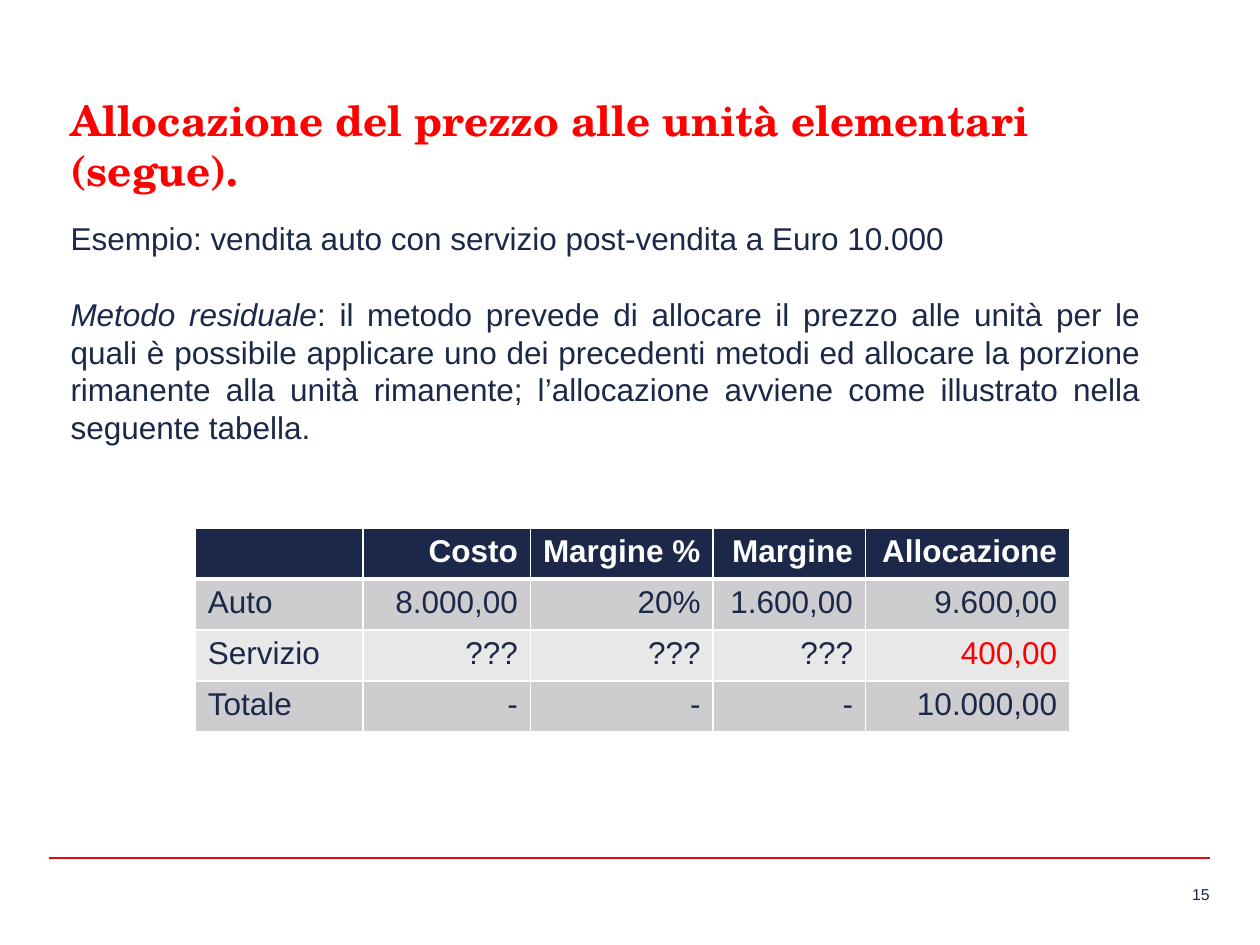
import lxml.etree
import pptx
import pptx.dml.color
import pptx.enum.shapes
import pptx.enum.text
import pptx.oxml.ns
import pptx.util
from pptx.util import Inches

NAVY = pptx.dml.color.RGBColor(0x1B, 0x28, 0x49)
RED = pptx.dml.color.RGBColor(0xFF, 0x00, 0x00)
RULE_RED = pptx.dml.color.RGBColor(0xE3, 0x06, 0x13)
WHITE = pptx.dml.color.RGBColor(0xFF, 0xFF, 0xFF)
DARK_BAND = pptx.dml.color.RGBColor(0xCD, 0xCD, 0xD0)
LIGHT_BAND = pptx.dml.color.RGBColor(0xE8, 0xE8, 0xE9)

ALIGN = pptx.enum.text.PP_ALIGN
BODY_LINE = 21.6

COLUMN_WIDTHS = [1.33, 1.33, 1.45, 1.21, 1.62]
ROWS = [
    ["", "Costo", "Margine %", "Margine", "Allocazione"],
    ["Auto", "8.000,00", "20%", "1.600,00", "9.600,00"],
    ["Servizio", "???", "???", "???", "400,00"],
    ["Totale", "-", "-", "-", "10.000,00"],
]
RESIDUAL_CELL = (2, 4)


def add_child(parent, tag, **attributes):
    return lxml.etree.SubElement(parent, pptx.oxml.ns.qn(tag), attributes)


def add_text(paragraph, text, font="Arial", size=18, color=NAVY,
             bold=False, italic=False, align=ALIGN.LEFT):
    paragraph.alignment = align
    run = paragraph.add_run()
    run.text = text
    run.font.name = font
    run.font.size = pptx.util.Pt(size)
    run.font.color.rgb = color
    run.font.bold = bold
    run.font.italic = italic


def place(shape, left, top, width, height):
    """Move a text shape to its box and anchor its wrapped text at the top."""
    shape.left, shape.top = Inches(left), Inches(top)
    shape.width, shape.height = Inches(width), Inches(height)
    frame = shape.text_frame
    frame.word_wrap = True
    frame.auto_size = pptx.enum.text.MSO_AUTO_SIZE.NONE
    frame.vertical_anchor = pptx.enum.text.MSO_ANCHOR.TOP
    return frame


def fill_title(slide, *box):
    frame = place(slide.shapes.title, *box)
    add_text(frame.paragraphs[0],
             "Allocazione del prezzo alle unità elementari (segue).",
             font="TeX Gyre Schola", size=24, color=RED, bold=True)


def fill_body(slide, *box):
    frame = place(slide.placeholders[1], *box)
    example, method = frame.paragraphs[0], frame.add_paragraph()
    for paragraph, space_before in ((example, 0), (method, BODY_LINE)):
        properties = paragraph._p.get_or_add_pPr()
        properties.set("marL", "0")
        properties.set("indent", "0")
        add_child(properties, "a:buNone")
        paragraph.line_spacing = pptx.util.Pt(BODY_LINE)
        paragraph.space_before = pptx.util.Pt(space_before)
    add_text(example, "Esempio: vendita auto con servizio post-vendita a Euro 10.000",
             align=ALIGN.JUSTIFY)
    add_text(method, "Metodo residuale", italic=True, align=ALIGN.JUSTIFY)
    add_text(method, ": il metodo prevede di allocare il prezzo alle unità per le "
             "quali è possibile applicare uno dei precedenti metodi ed allocare la "
             "porzione rimanente alla unità rimanente; l’allocazione avviene come "
             "illustrato nella seguente tabella.", align=ALIGN.JUSTIFY)


def set_cell_borders(cell, top, bottom):
    """Draw white borders; the sides are always one point wide."""
    properties = cell._tc.get_or_add_tcPr()
    widths = {"a:lnL": 1, "a:lnR": 1, "a:lnT": top, "a:lnB": bottom}
    for tag, width in widths.items():
        line = add_child(properties, tag, w=str(pptx.util.Pt(width)))
        add_child(add_child(line, "a:solidFill"), "a:srgbClr", val=str(WHITE))


def add_allocation_table(slide, left, top, width, height):
    table = slide.shapes.add_table(len(ROWS), len(COLUMN_WIDTHS), Inches(left),
                                   Inches(top), Inches(width), Inches(height)).table
    for column, column_width in zip(table.columns, COLUMN_WIDTHS):
        column.width = Inches(column_width)
    for row, values in enumerate(ROWS):
        header = row == 0
        band = NAVY if header else DARK_BAND if row % 2 else LIGHT_BAND
        for column, text in enumerate(values):
            cell = table.cell(row, column)
            set_cell_borders(cell, top=3 if row == 1 else 1, bottom=3 if header else 1)
            cell.fill.solid()
            cell.fill.fore_color.rgb = band
            if not text:
                continue
            color = WHITE if header else RED if (row, column) == RESIDUAL_CELL else NAVY
            add_text(cell.text_frame.paragraphs[0], text, color=color, bold=header,
                     align=ALIGN.RIGHT if column else ALIGN.LEFT)


def add_footer(slide, left, top, width):
    """Draw the rule with the page number under its right end."""
    right = left + width
    rule = slide.shapes.add_connector(
        pptx.enum.shapes.MSO_CONNECTOR.STRAIGHT,
        Inches(left), Inches(top), Inches(right), Inches(top))
    rule.line.color.rgb = RULE_RED
    rule.line.width = pptx.util.Pt(1)
    add_child(rule._element.spPr, "a:effectLst")

    number_box = slide.shapes.add_textbox(0, 0, 0, 0)
    frame = place(number_box, right - 0.69, top + 0.21, 0.69, 0.15)
    frame.margin_left = frame.margin_right = 0
    frame.margin_top = frame.margin_bottom = 0
    add_text(frame.paragraphs[0], "15", size=9, align=ALIGN.RIGHT)


def main():
    presentation = pptx.Presentation()
    presentation.slide_width, presentation.slide_height = Inches(10), Inches(7.5)
    slide = presentation.slides.add_slide(presentation.slide_layouts[1])
    add_footer(slide, 0.39, 6.81, 9.21)
    fill_title(slide, 0.46, 0.7, 9.08, 0.91)
    fill_body(slide, 0.46, 1.69, 8.69, 3.74)
    add_allocation_table(slide, 1.55, 4.19, 6.94, 1.62)
    presentation.save("out.pptx")


if __name__ == "__main__":
    main()
